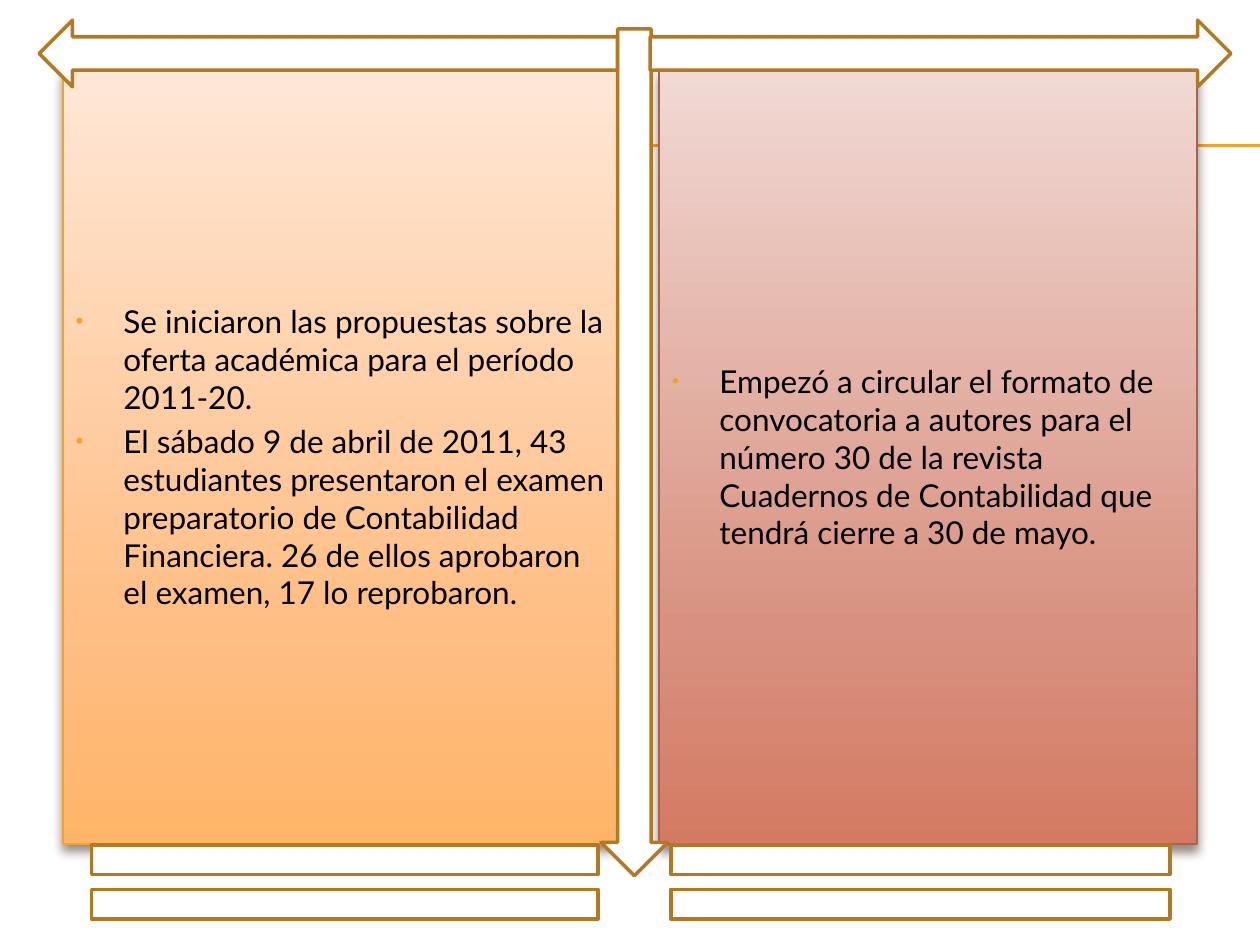
from dataclasses import dataclass

from lxml import etree
from pptx import Presentation
from pptx.dml.color import RGBColor
from pptx.enum.shapes import MSO_CONNECTOR, MSO_SHAPE
from pptx.enum.text import MSO_ANCHOR, MSO_AUTO_SIZE
from pptx.oxml import parse_xml
from pptx.oxml.ns import nsdecls, qn
from pptx.util import Inches, Pt

LINE = MSO_CONNECTOR.STRAIGHT
DOWN, LEFT, RIGHT = MSO_SHAPE.DOWN_ARROW, MSO_SHAPE.LEFT_ARROW, MSO_SHAPE.RIGHT_ARROW
EQUAL = MSO_SHAPE.MATH_EQUAL
MIDDLE, NO_FIT = MSO_ANCHOR.MIDDLE, MSO_AUTO_SIZE.NONE

HEX = {
    "gold": "F0A22E", "rust": "A5644E", "brown": "B27822",
    "white": "FFFFFF", "black": "000000", "shade": "4E3B30",
}
FONT = {"name": "Lato", "size": Pt(18)}
FRAME = {"vertical_anchor": MIDDLE, "auto_size": NO_FIT, "word_wrap": True}
INDENT = 0.38


@dataclass
class Panel:
    left: float
    width: float
    stops: dict[int, str]
    edge: str
    items: list[str]


@dataclass
class Sign:
    kind: MSO_SHAPE
    box: tuple[float, float, float, float]


PANELS = [
    Panel(0.5, 4.42, {0: "FFE7D7", 72: "FFBE84", 100: "FFB468"}, "gold", [
        "Se iniciaron las propuestas sobre la oferta académica para el período 2011-20.",
        "El sábado 9 de abril de 2011, 43 estudiantes presentaron el examen preparatorio "
        "de Contabilidad Financiera. 26 de ellos aprobaron el examen, 17 lo reprobaron.",
    ]),
    Panel(5.23, 4.27, {0: "F1D9D4", 72: "D89180", 100: "D47A62"}, "rust", [
        "Empezó a circular el formato de convocatoria a autores para el número 30 de la "
        "revista Cuadernos de Contabilidad que tendrá cierre a 30 de mayo.",
    ]),
]
SIGNS = [
    Sign(DOWN, (4.77, 0.23, 0.53, 6.72)),
    Sign(RIGHT, (5.16, 0.16, 4.61, 0.53)),
    Sign(LEFT, (0.31, 0.16, 4.59, 0.53)),
    Sign(EQUAL, (0, 6.5, 5.47, 1)),
    Sign(EQUAL, (4.61, 6.5, 5.39, 1)),
]


def color(name: str) -> RGBColor:
    return RGBColor.from_string(HEX[name])


def apply(target, values: dict) -> None:
    for name, value in values.items():
        setattr(target, name, value)


def outline(shape, name: str, width: float) -> None:
    shape.line.color.rgb = color(name)
    shape.line.width = Pt(width)


def add_rule(slide, top: float) -> None:
    """Draw a thin line behind everything else."""
    rule = slide.shapes.add_connector(
        LINE, Inches(0.56), Inches(top), Inches(10), Inches(top))
    outline(rule, "gold", 0.75)
    etree.SubElement(rule._element.spPr, qn("a:effectLst"))
    slide.shapes._spTree.insert(2, rule._element)


def add_sign(slide, sign: Sign) -> None:
    shape = slide.shapes.add_shape(sign.kind, *map(Inches, sign.box))
    shape.shadow.inherit = False
    shape.fill.solid()
    shape.fill.fore_color.rgb = color("white")
    outline(shape, "brown", 2)


def shade(shape, stops: dict[int, str]) -> None:
    """Give a shape a top-down gradient and a soft shadow."""
    shape.fill.gradient()
    shape.fill.gradient_angle = 270
    props = shape._element.spPr
    ramp = props.find(".//" + qn("a:gsLst"))
    for old in list(ramp):
        ramp.remove(old)
    for place, tint in stops.items():
        stop = etree.SubElement(ramp, qn("a:gs"), pos=str(place * 1000))
        etree.SubElement(stop, qn("a:srgbClr"), val=tint)
    props.append(parse_xml(
        f'<a:effectLst {nsdecls("a")}><a:outerShdw blurRad="{Pt(6)}" dist="{Pt(4)}" '
        f'dir="5400000" rotWithShape="0"><a:srgbClr val="{HEX["shade"]}">'
        '<a:alpha val="60000"/></a:srgbClr></a:outerShdw></a:effectLst>'))


def add_bullet(para) -> None:
    props = para._p.get_or_add_pPr()
    props.set("marL", str(Inches(INDENT)))
    props.set("indent", str(-Inches(INDENT)))
    tint = etree.SubElement(props, qn("a:buClr"))
    etree.SubElement(tint, qn("a:srgbClr"), val=HEX["gold"])
    etree.SubElement(props, qn("a:buSzPct"), val="70000")
    etree.SubElement(props, qn("a:buChar"), char="•")


def fill_panel(shape, panel: Panel) -> None:
    apply(shape, {"left": Inches(panel.left), "top": Inches(0.55),
                  "width": Inches(panel.width), "height": Inches(6.15)})
    outline(shape, panel.edge, 0.79)
    shade(shape, panel.stops)
    frame = shape.text_frame
    apply(frame, FRAME)
    for i, item in enumerate(panel.items):
        para = frame.add_paragraph() if i else frame.paragraphs[0]
        add_bullet(para)
        para.space_before = Pt(3.6 if i else 0)
        run = para.add_run()
        run.text = item
        apply(run.font, FONT)
        run.font.color.rgb = color("black")


def main() -> None:
    deck = Presentation()
    deck.slide_width, deck.slide_height = Inches(10), Inches(7.5)
    slide = deck.slides.add_slide(deck.slide_layouts.get_by_name("Two Content"))
    title, *bodies = slide.placeholders
    title._element.getparent().remove(title._element)
    for top in (1.16, 1.15):
        add_rule(slide, top)
    for body, panel in zip(bodies, PANELS):
        fill_panel(body, panel)
    for sign in SIGNS:
        add_sign(slide, sign)
    deck.save("out.pptx")


if __name__ == "__main__":
    main()
